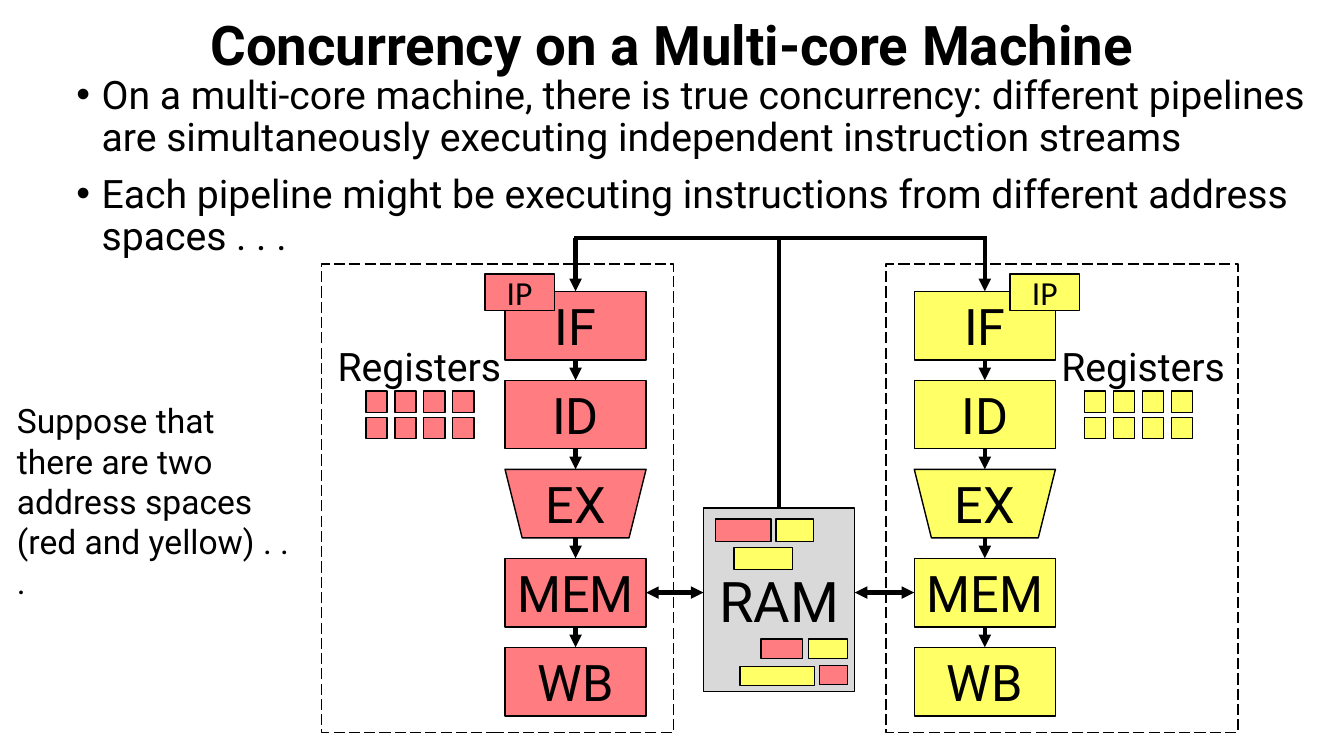
from dataclasses import dataclass

from lxml.etree import SubElement
from pptx import Presentation
from pptx.dml.color import RGBColor
from pptx.enum.dml import MSO_LINE
from pptx.enum.shapes import MSO_CONNECTOR, MSO_SHAPE
from pptx.enum.text import MSO_ANCHOR, PP_ALIGN
from pptx.oxml.ns import qn
from pptx.util import Inches, Pt

TOP, LEFT, BOTTOM, RIGHT = range(4)


@dataclass(frozen=True)
class Theme:
    ink: str = "000000"
    red: str = "FF7C80"
    yellow: str = "FFFF66"
    gray: str = "D9D9D9"
    font: str = "Roboto"
    tag_font: str = "Calibri"
    title: int = 39
    memory: int = 40
    stage: int = 36
    body: int = 28
    note: int = 24
    thin: int = 1
    thick: int = 3


@dataclass(frozen=True)
class Core:
    """Colour and left edges, in columns, of the parts of one core."""
    color: str
    frame: float
    stages: float
    tag: float
    registers: float
    label: float


THEME = Theme()
CORES = (
    Core(THEME.yellow, frame=87.9, stages=90.7, tag=100.2, registers=107.6, label=104.2),
    Core(THEME.red, frame=31.9, stages=50.1, tag=48.1, registers=36.3, label=32.4),
)
STAGES = ("IF", "ID", "EX", "MEM", "WB")
STAGE_TOP, STAGE_STEP, STAGE_WIDTH, STAGE_HEIGHT = 28.9, 8.83, 14, 6.8
BUS_ROW = 23.6
RAM_AREA = (69.8, 50.4, 15, 18.2)
MEMORY_BLOCKS = (
    (THEME.red, 71, 51.5, 5.5, 2.2),
    (THEME.yellow, 77, 51.5, 3.7, 2.2),
    (THEME.yellow, 72.8, 54.3, 5.8, 2.2),
    (THEME.red, 75.5, 63.4, 4.1, 1.9),
    (THEME.yellow, 80.2, 63.4, 3.9, 1.9),
    (THEME.yellow, 73.4, 66.1, 7.4, 1.9),
    (THEME.red, 81.3, 66, 2.8, 1.9),
)
BULLETS = (
    "On a multi-core machine, there is true concurrency: different pipelines "
    "are simultaneously executing independent instruction streams",
    "Each pipeline might be executing instructions from different address spaces . . .",
)


def grid(*cells):
    """Turn columns or rows, ten to the inch, into lengths."""
    return [Inches(cell / 10) for cell in cells]


def write(box, *texts, size, font=THEME.font, bold=False, align=PP_ALIGN.CENTER,
          anchor=MSO_ANCHOR.MIDDLE, wrap=True, spacing=None, bullet=None):
    frame = box.text_frame
    frame.word_wrap = wrap
    frame.vertical_anchor = anchor
    for index, text in enumerate(texts):
        para = frame.add_paragraph() if index else frame.paragraphs[0]
        para.alignment = align
        para.line_spacing = spacing
        if bullet:
            para.space_before = Pt(10)
            props = para._p.get_or_add_pPr()
            props.set("marL", str(Inches(0.25)))
            props.set("indent", str(-Inches(0.25)))
            SubElement(props, qn("a:buFont"), typeface="Arial")
            SubElement(props, qn("a:buChar"), char=bullet)
        span = para.add_run()
        span.text = text
        span.font.name = font
        span.font.size = Pt(size)
        span.font.bold = bold
        span.font.color.rgb = RGBColor.from_string(THEME.ink)


def add_text(slide, area, *texts, **style):
    write(slide.shapes.add_textbox(*grid(*area)), *texts, **style)


def add_block(slide, area, color=None, kind=MSO_SHAPE.RECTANGLE):
    block = slide.shapes.add_shape(kind, *grid(*area))
    block.shadow.inherit = False
    if color:
        block.fill.solid()
        block.fill.fore_color.rgb = RGBColor.from_string(color)
    else:
        block.fill.background()
        block.line.dash_style = MSO_LINE.LONG_DASH
    block.line.color.rgb = RGBColor.from_string(THEME.ink)
    block.line.width = Pt(THEME.thin)
    return block


def add_line(slide, start, end, joins=(None, None), arrows=()):
    """Draw a line; joins are (block, side) pairs for its two ends."""
    line = slide.shapes.add_connector(MSO_CONNECTOR.STRAIGHT, *grid(*start, *end))
    line.line.color.rgb = RGBColor.from_string(THEME.ink)
    line.line.width = Pt(THEME.thick)
    for end_name in arrows:
        SubElement(line.line._get_or_add_ln(), qn(f"a:{end_name}"), type="triangle")
    SubElement(line._element.spPr, qn("a:effectLst"))
    for join, connect in zip(joins, (line.begin_connect, line.end_connect)):
        if join:
            connect(*join)


def add_stages(slide, core):
    """Draw the pipeline from top to bottom and return its rectangles by name."""
    blocks = {}
    center = core.stages + STAGE_WIDTH / 2
    for index, name in enumerate(STAGES):
        top = STAGE_TOP + index * STAGE_STEP
        area = (core.stages, top, STAGE_WIDTH, STAGE_HEIGHT)
        if name == "EX":
            add_block(slide, area, core.color, MSO_SHAPE.TRAPEZOID).rotation = 180
            add_text(slide, area, name, size=THEME.stage)
        else:
            blocks[name] = add_block(slide, area, core.color)
            write(blocks[name], name, size=THEME.stage, wrap=False)
        if index:
            before = blocks.get(STAGES[index - 1])
            here = blocks.get(name)
            add_line(slide, (center, top - STAGE_STEP + STAGE_HEIGHT), (center, top),
                     joins=(before and (before, BOTTOM), here and (here, TOP)),
                     arrows=["tailEnd"])
    return blocks


def add_core(slide, core):
    add_block(slide, (core.frame, 26.2, 34.9, 46.5))
    blocks = add_stages(slide, core)
    for index in range(8):
        row, column = divmod(index, 4)
        add_block(slide, (core.registers + column * 2.87, 38.8 + row * 2.6, 2.1, 2.1),
                  core.color)
    add_text(slide, (core.label, 33.5, 18.4, 5.7), "Registers",
             size=THEME.body, anchor=MSO_ANCHOR.TOP, wrap=False)
    tag = add_block(slide, (core.tag, 27.2, 6.9, 3.6), core.color)
    write(tag, "IP", size=THEME.note, font=THEME.tag_font, wrap=False)
    return blocks


def add_ram(slide):
    ram = add_block(slide, RAM_AREA, THEME.gray)
    write(ram, "RAM", size=THEME.memory, wrap=False)
    for color, *area in MEMORY_BLOCKS:
        add_block(slide, area, color)
    return ram


def add_buses(slide, core, blocks, ram):
    """Link one core to the RAM: data at MEM, instructions at IF."""
    left, top, width, _ = RAM_AREA
    on_left = core.stages < left
    mem_edge = core.stages + (STAGE_WIDTH if on_left else 0)
    ram_edge = left if on_left else left + width
    mem_row = STAGE_TOP + STAGES.index("MEM") * STAGE_STEP + STAGE_HEIGHT / 2
    add_line(slide, (mem_edge, mem_row), (ram_edge, mem_row),
             joins=((blocks["MEM"], RIGHT if on_left else LEFT), None),
             arrows=["headEnd", "tailEnd"])
    trunk, center = left + width / 2, core.stages + STAGE_WIDTH / 2
    corner = center + (-0.2 if on_left else 0.2)
    add_line(slide, (trunk, BUS_ROW), (corner, BUS_ROW))
    add_line(slide, (center, BUS_ROW), (center, STAGE_TOP),
             joins=(None, (blocks["IF"], TOP)), arrows=["tailEnd"])


def main():
    deck = Presentation()
    deck.slide_width, deck.slide_height = grid(133.33, 75)
    slide = deck.slides.add_slide(deck.slide_layouts[6])
    add_text(slide, (6.6, 7, 124.9, 20.1), *BULLETS, size=THEME.body, spacing=0.9,
             align=PP_ALIGN.LEFT, anchor=MSO_ANCHOR.TOP, bullet="•")
    add_text(slide, (0, 0.1, 133.3, 9.2), "Concurrency on a Multi-core Machine",
             size=THEME.title, bold=True, spacing=0.9)
    ram = add_ram(slide)
    for core in CORES:
        add_buses(slide, core, add_core(slide, core), ram)
    trunk = RAM_AREA[0] + RAM_AREA[2] / 2
    add_line(slide, (trunk, RAM_AREA[1]), (trunk, BUS_ROW), joins=((ram, TOP), None))
    add_text(slide, (0.7, 39.2, 29.1, 17.2),
             "Suppose that there are two address spaces (red and yellow) . . .",
             size=THEME.note, align=PP_ALIGN.LEFT, anchor=MSO_ANCHOR.TOP)
    deck.save("out.pptx")


if __name__ == "__main__":
    main()
